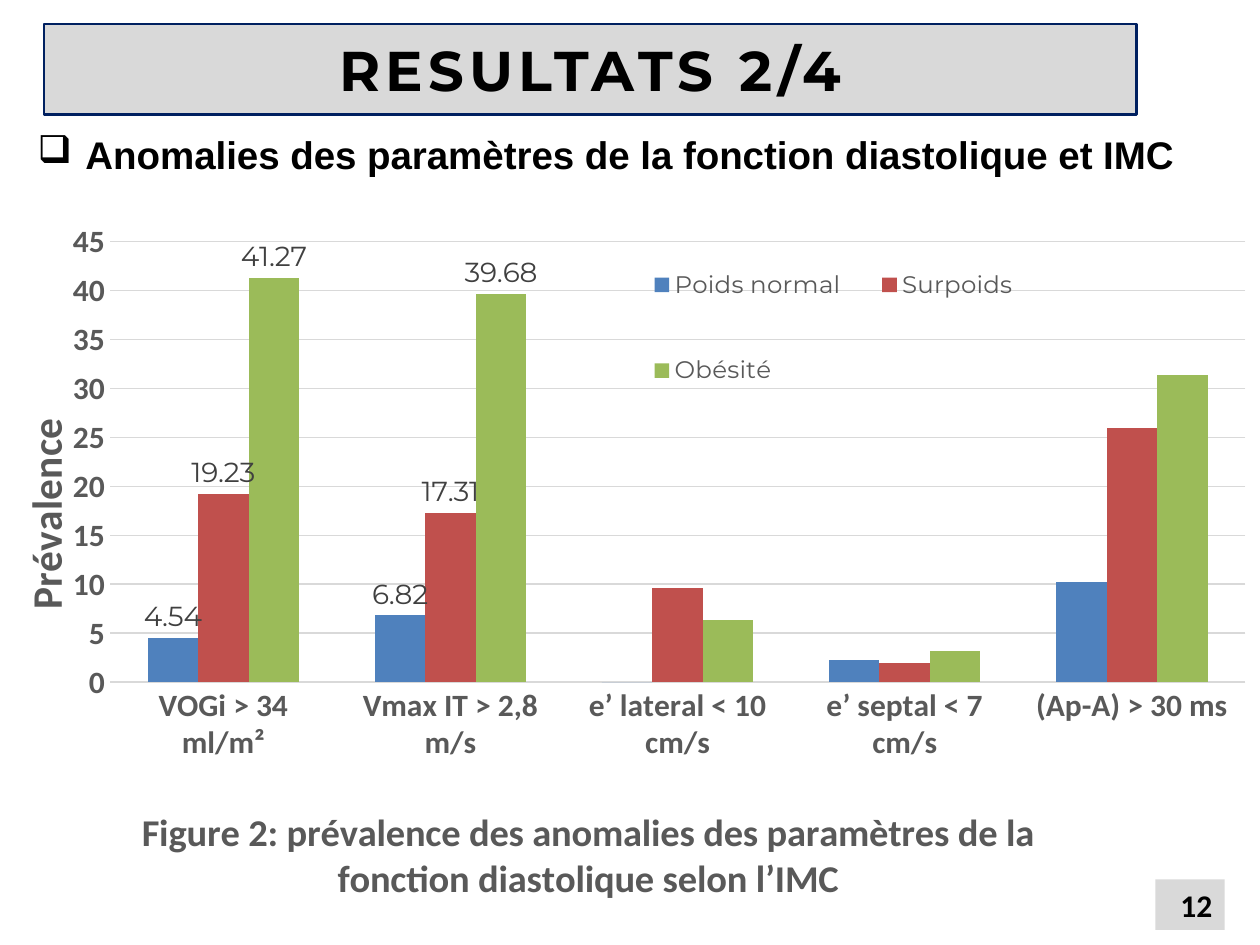
from dataclasses import dataclass

from lxml import etree
from pptx import Presentation
from pptx import util as u
from pptx.chart.data import CategoryChartData
from pptx.dml.color import RGBColor
from pptx.enum import chart as charts, shapes, text
from pptx.oxml import parse_xml
from pptx.oxml.ns import nsdecls, qn

BLACK = RGBColor(0x00, 0x00, 0x00)
NAVY = RGBColor(0x00, 0x20, 0x60)
PANEL = RGBColor(0xD9, 0xD9, 0xD9)
AXIS_GREY = RGBColor(0x59, 0x59, 0x59)
LABEL_GREY = RGBColor(0x40, 0x40, 0x40)
BLUE = RGBColor(0x4F, 0x81, 0xBD)
RED = RGBColor(0xC0, 0x50, 0x4D)
GREEN = RGBColor(0x9B, 0xBB, 0x59)

CATEGORIES = ("VOGi > 34 ml/m²", "Vmax IT > 2,8 m/s", "e’ lateral < 10 cm/s",
              "e’ septal < 7 cm/s", "(Ap-A) > 30 ms")
LABELLED_POINTS = 2


@dataclass(frozen=True)
class WeightGroup:
    name: str
    values: tuple[float, ...]
    color: RGBColor


GROUPS = (
    WeightGroup("Poids normal", (4.54, 6.82, 0, 2.27, 10.26), BLUE),
    WeightGroup("Surpoids", (19.23, 17.31, 9.62, 1.92, 26), RED),
    WeightGroup("Obésité", (41.27, 39.68, 6.35, 3.17, 31.37), GREEN),
)


def set_font(font, size: float, color: RGBColor, name: str, bold: bool = False) -> None:
    font.size, font.name, font.bold = u.Pt(size), name, bold
    font.color.rgb = color


def write_text(frame, words: str, *, size: float, name: str, color: RGBColor = BLACK,
               bold: bool = True, align=text.PP_ALIGN.LEFT,
               anchor=None, spacing: float = 0):
    """Write one formatted paragraph and return it."""
    paragraph = frame.paragraphs[0]
    paragraph.alignment = align
    run = paragraph.add_run()
    run.text = words
    set_font(run.font, size, color, name, bold)
    if anchor is not None:
        frame.vertical_anchor = anchor
    if spacing:
        run.font._element.set("spc", str(round(spacing * 100)))
    return paragraph


def place(shape, left: float, top: float, width: float, height: float) -> None:
    shape.left, shape.top = u.Inches(left), u.Inches(top)
    shape.width, shape.height = u.Inches(width), u.Inches(height)


def add_bullet(paragraph, symbol: str, indent: float) -> None:
    properties = paragraph._p.get_or_add_pPr()
    properties.set("marL", str(u.Inches(indent)))
    properties.set("indent", str(-u.Inches(indent)))
    bullet = etree.SubElement(properties, qn("a:buChar"))
    bullet.set("char", symbol)


def set_layout(element, x: float, y: float, width: float | None = None,
               height: float | None = None, inner: bool = False) -> None:
    """Place a chart part by fractions of the chart area."""
    for old in element.findall(qn("c:layout")):
        element.remove(old)
    target = '<c:layoutTarget val="inner"/>' if inner else ""
    sizes = "" if width is None else f'<c:w val="{width}"/><c:h val="{height}"/>'
    layout = parse_xml(
        f'<c:layout {nsdecls("c")}><c:manualLayout>{target}<c:xMode val="edge"/>'
        f'<c:yMode val="edge"/><c:x val="{x}"/><c:y val="{y}"/>{sizes}'
        "</c:manualLayout></c:layout>")
    before = [child for child in element
              if child.tag in (qn("c:tx"), qn("c:legendPos"), qn("c:legendEntry"))]
    element.insert(len(before), layout)


def format_axis(axis, title: str, title_size: float, x: float, y: float) -> None:
    axis.major_tick_mark = axis.minor_tick_mark = charts.XL_TICK_MARK.NONE
    axis.format.line.fill.background()
    set_font(axis.tick_labels.font, 18, AXIS_GREY, "Calibri", True)
    write_text(axis.axis_title.text_frame, title, size=title_size, name="Calibri",
               color=AXIS_GREY, align=text.PP_ALIGN.CENTER)
    set_layout(axis.axis_title._element, x, y)


def format_series(series, group: WeightGroup) -> None:
    series.format.fill.solid()
    series.format.fill.fore_color.rgb = group.color
    series.invert_if_negative = False
    labels = series.data_labels
    labels.show_value = True
    labels.position = charts.XL_LABEL_POSITION.OUTSIDE_END
    set_font(labels.font, 16, LABEL_GREY, "Montserrat")
    # Only the first categories carry a value label
    for position, index in enumerate(range(LABELLED_POINTS, len(CATEGORIES))):
        labels._element.insert(position, parse_xml(
            f'<c:dLbl {nsdecls("c")}><c:idx val="{index}"/><c:delete val="1"/></c:dLbl>'))


def add_prevalence_chart(slide) -> None:
    data = CategoryChartData()
    data.categories = CATEGORIES
    for group in GROUPS:
        data.add_series(group.name, group.values)
    chart = slide.shapes.add_chart(
        charts.XL_CHART_TYPE.COLUMN_CLUSTERED, u.Inches(-0.02), u.Inches(1.7),
        u.Inches(9.91), u.Inches(5.56), data).chart
    set_font(chart.font, 10, BLACK, "Calibri")
    chart.has_title = False
    plot = chart.plots[0]
    plot.gap_width, plot.overlap, plot.vary_by_categories = 150, 0, False
    for series, group in zip(plot.series, GROUPS):
        format_series(series, group)

    # Axes
    format_axis(chart.category_axis, "Figure 2: prévalence des anomalies des paramètres "
                "de la fonction diastolique selon l’IMC", 22, 0.11, 0.85)
    values = chart.value_axis
    format_axis(values, "Prévalence", 24, 0.01, 0.29)
    values.minimum_scale, values.maximum_scale, values.major_unit = 0, 45, 5
    values.major_gridlines.format.line.color.rgb = PANEL
    values.major_gridlines.format.line.width = u.Pt(0.75)

    # Legend over the plot
    chart.has_legend = True
    chart.legend.position = charts.XL_LEGEND_POSITION.BOTTOM
    chart.legend.include_in_layout = True
    set_font(chart.legend.font, 14, AXIS_GREY, "Montserrat")
    set_layout(chart.legend._element, 0.5, 0, 0.34, 0.33)
    set_layout(plot._element.getparent(), 0.09, 0.04, 0.91, 0.64, inner=True)


def fill_panel(shape) -> None:
    shape.fill.solid()
    shape.fill.fore_color.rgb = PANEL


def main() -> None:
    presentation = Presentation()
    presentation.slide_width, presentation.slide_height = u.Inches(10), u.Inches(7.5)
    slide = presentation.slides.add_slide(presentation.slide_layouts[5])

    # Title banner
    title = slide.shapes.title
    place(title, 0.35, 0.19, 8.67, 0.72)
    fill_panel(title)
    title.line.color.rgb, title.line.width = NAVY, u.Pt(1.5)
    write_text(title.text_frame, "RESULTATS 2/4", size=32, name="Montserrat",
               align=text.PP_ALIGN.CENTER, anchor=text.MSO_ANCHOR.MIDDLE, spacing=3)

    # Heading
    heading = slide.shapes.add_textbox(0, 0, 0, 0)
    place(heading, 0.2, 0.99, 9.69, 0.55)
    heading.text_frame.word_wrap = True
    paragraph = write_text(
        heading.text_frame, "Anomalies des paramètres de la fonction diastolique et IMC",
        size=22, name="Arial")
    paragraph.space_before = u.Pt(4)
    add_bullet(paragraph, "❑", 0.38)

    # Page number
    number = slide.shapes.add_shape(shapes.MSO_SHAPE.RECTANGLE, 0, 0, 0, 0)
    place(number, 9.17, 6.98, 0.55, 0.4)
    number.shadow.inherit = False
    fill_panel(number)
    number.line.fill.background()
    write_text(number.text_frame, "12", size=18, name="Calibri",
               align=text.PP_ALIGN.RIGHT, anchor=text.MSO_ANCHOR.MIDDLE)

    add_prevalence_chart(slide)
    presentation.save("out.pptx")


if __name__ == "__main__":
    main()
